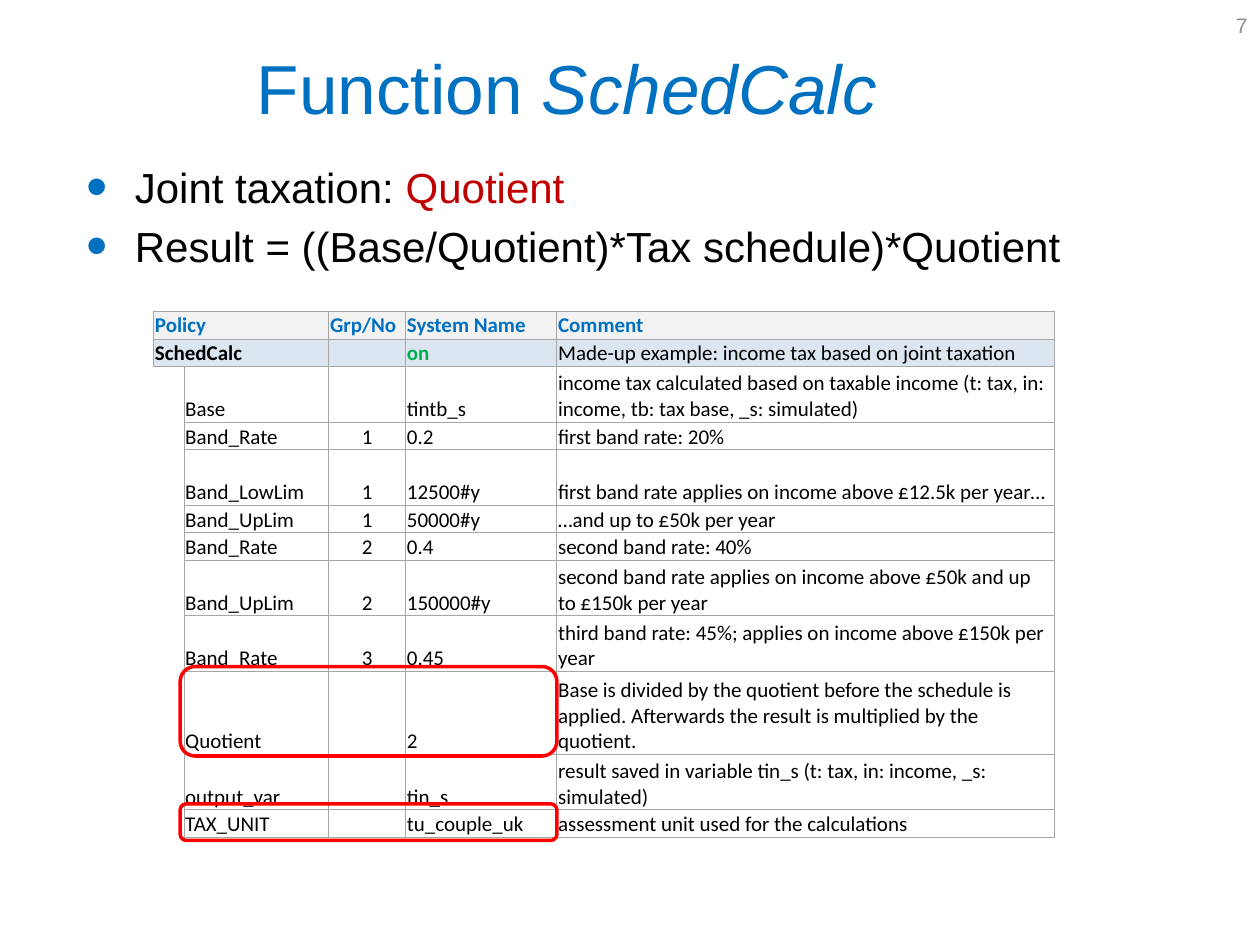
from lxml import etree
from pptx import Presentation, util as u
from pptx.dml import color
from pptx.enum import shapes, text
from pptx.oxml import ns

COLORS = {
    "blue": "0070C0", "red": "C00000", "marker": "FF0000", "green": "00B050",
    "black": "000000", "white": "FFFFFF", "grey": "8C8C8C", "grid": "A6A6A6",
    "header": "F2F2F2", "band": "DCE6F1",
}

COLUMNS = [0.24, 1.15, 0.61, 1.2, 3.95]
LINE_HEIGHT = 0.22
HEADINGS = ["Policy", "Grp/No", "System Name", "Comment"]
FUNCTION = ["SchedCalc", "", "on", "Made-up example: income tax based on joint taxation"]
PARAMETERS = [
    (2, "Base", "", "tintb_s", "income tax calculated based on taxable income "
     "(t: tax, in: income, tb: tax base, _s: simulated)"),
    (1, "Band_Rate", "1", "0.2", "first band rate: 20%"),
    (2, "Band_LowLim", "1", "12500#y", "first band rate applies on income above £12.5k per year…"),
    (1, "Band_UpLim", "1", "50000#y", "…and up to £50k per year"),
    (1, "Band_Rate", "2", "0.4", "second band rate: 40%"),
    (2, "Band_UpLim", "2", "150000#y",
     "second band rate applies on income above £50k and up to £150k per year"),
    (2, "Band_Rate", "3", "0.45", "third band rate: 45%; applies on income above £150k per year"),
    (3, "Quotient", "", "2", "Base is divided by the quotient before the schedule is applied. "
     "Afterwards the result is multiplied by the quotient."),
    (2, "output_var", "", "tin_s",
     "result saved in variable tin_s (t: tax, in: income, _s: simulated)"),
    (1, "TAX_UNIT", "", "tu_couple_uk", "assessment unit used for the calculations"),
]


class SlideBuilder:
    heading_font = "Arial"
    table_font = "Calibri"

    def __init__(self, slide):
        self.slide = slide

    def rgb(self, name):
        return color.RGBColor.from_string(COLORS[name])

    def place(self, shape, box):
        shape.left, shape.top, shape.width, shape.height = map(u.Inches, box)

    def add_runs(self, paragraph, parts, size, font):
        for words, tint, bold, italic in parts:
            run = paragraph.add_run()
            run.text = words
            run.font.name, run.font.size = font, u.Pt(size)
            run.font.bold, run.font.italic = bold, italic
            run.font.color.rgb = self.rgb(tint)

    def title(self, box, parts):
        title = self.slide.shapes.title
        self.place(title, box)
        frame = title.text_frame
        frame.auto_size = text.MSO_AUTO_SIZE.NONE
        frame.vertical_anchor = text.MSO_ANCHOR.MIDDLE
        frame.paragraphs[0].alignment = text.PP_ALIGN.CENTER
        self.add_runs(frame.paragraphs[0], parts, 39.6, self.heading_font)

    def bullets(self, box, items):
        body = self.slide.placeholders[1]
        self.place(body, box)
        frame = body.text_frame
        frame.auto_size = text.MSO_AUTO_SIZE.NONE
        for index, parts in enumerate(items):
            paragraph = frame.add_paragraph() if index else frame.paragraphs[0]
            props = paragraph._p.get_or_add_pPr()
            props.set("marL", str(u.Inches(0.38)))
            props.set("indent", str(-u.Inches(0.38)))
            tint = etree.SubElement(props, ns.qn("a:buClr"))
            etree.SubElement(tint, ns.qn("a:srgbClr"), val=COLORS["blue"])
            etree.SubElement(props, ns.qn("a:buSzPct"), val="145000")
            etree.SubElement(props, ns.qn("a:buFont"), typeface=self.heading_font)
            etree.SubElement(props, ns.qn("a:buChar"), char="•")
            paragraph.space_before = u.Pt(4.8 if index else 0)
            self.add_runs(paragraph, parts, 24, self.heading_font)

    def page_number(self, box, number):
        frame = self.slide.shapes.add_textbox(*map(u.Inches, box)).text_frame
        frame.word_wrap = True
        frame.vertical_anchor = text.MSO_ANCHOR.MIDDLE
        frame.paragraphs[0].alignment = text.PP_ALIGN.RIGHT
        self.add_runs(frame.paragraphs[0], [(number, "grey", False, False)], 12,
                      self.heading_font)

    def table(self, left, top, columns, heights):
        box = map(u.Inches, (left, top, sum(columns), sum(heights)))
        table = self.slide.shapes.add_table(len(heights), len(columns), *box).table
        table.first_row = table.horz_banding = False
        for column, width in zip(table.columns, columns):
            column.width = u.Inches(width)
        for row, height in zip(table.rows, heights):
            row.height = u.Inches(height)
        return table

    def cell(self, cell, words, fill, tint="black", bold=False, anchor="BOTTOM",
             centred=False, sides="LRTB"):
        cell.margin_left = cell.margin_right = cell.margin_top = u.Inches(0.01)
        cell.margin_bottom = 0
        cell.vertical_anchor = text.MSO_ANCHOR[anchor]
        for side in "LRTB":
            edge = etree.SubElement(cell._tc.get_or_add_tcPr(), ns.qn(f"a:ln{side}"),
                                    w=str(u.Pt(0.5)))
            if side in sides:
                paint = etree.SubElement(edge, ns.qn("a:solidFill"))
                etree.SubElement(paint, ns.qn("a:srgbClr"), val=COLORS["grid"])
            else:
                etree.SubElement(edge, ns.qn("a:noFill"))
        cell.fill.solid()
        cell.fill.fore_color.rgb = self.rgb(fill)
        paragraph = cell.text_frame.paragraphs[0]
        if centred:
            paragraph.alignment = text.PP_ALIGN.CENTER
        if words:
            self.add_runs(paragraph, [(words, tint, bold, False)], 12, self.table_font)
        else:
            etree.SubElement(paragraph._p, ns.qn("a:endParaRPr"), sz="1200")

    def highlight(self, box):
        frame = self.slide.shapes.add_shape(
            shapes.MSO_SHAPE.ROUNDED_RECTANGLE, *map(u.Inches, box))
        frame.shadow.inherit = False
        frame.fill.background()
        frame.line.color.rgb = self.rgb("marker")
        frame.line.width = u.Pt(2)


def fill_policy_table(builder):
    heights = [LINE_HEIGHT] * 2 + [LINE_HEIGHT * lines for lines, *_ in PARAMETERS]
    policy = builder.table(1.22, 2.47, COLUMNS, heights)
    spanning = [
        (HEADINGS, "header", ["blue"] * 4, [True] * 4),
        (FUNCTION, "band", ["black", "black", "green", "black"], [True, True, True, False]),
    ]
    for row, (labels, fill, tints, bolds) in enumerate(spanning):
        policy.cell(row, 0).merge(policy.cell(row, 1))
        builder.cell(policy.cell(row, 1), "", fill)
        for column, label, tint, bold in zip((0, 2, 3, 4), labels, tints, bolds):
            builder.cell(policy.cell(row, column), label, fill, tint, bold, "MIDDLE")
    for row, (_, *values) in enumerate(PARAMETERS, start=2):
        builder.cell(policy.cell(row, 0), "", "white", sides="RT" if row == 2 else "R")
        for column, value in enumerate(values, start=1):
            builder.cell(policy.cell(row, column), value, "white", centred=column == 2)


def main():
    deck = Presentation()
    deck.slide_width, deck.slide_height = u.Inches(10), u.Inches(7.5)
    builder = SlideBuilder(deck.slides.add_slide(deck.slide_layouts[1]))
    builder.title((0, 0.3, 9, 0.77), [("Function ", "blue", False, False),
                                      ("SchedCalc", "blue", False, True)])
    builder.bullets((0.59, 1.23, 9.07, 5.2), [
        [("Joint taxation: ", "black", False, False), ("Quotient", "red", False, False)],
        [("Result = ((Base/Quotient)*Tax schedule)*Quotient", "black", False, False)],
    ])
    fill_policy_table(builder)
    builder.page_number((7.67, 0, 2.33, 0.4), "7")
    for top, height in ((5.29, 0.71), (6.38, 0.29)):
        builder.highlight((1.43, top, 2.99, height))
    deck.save("out.pptx")


if __name__ == "__main__":
    main()
